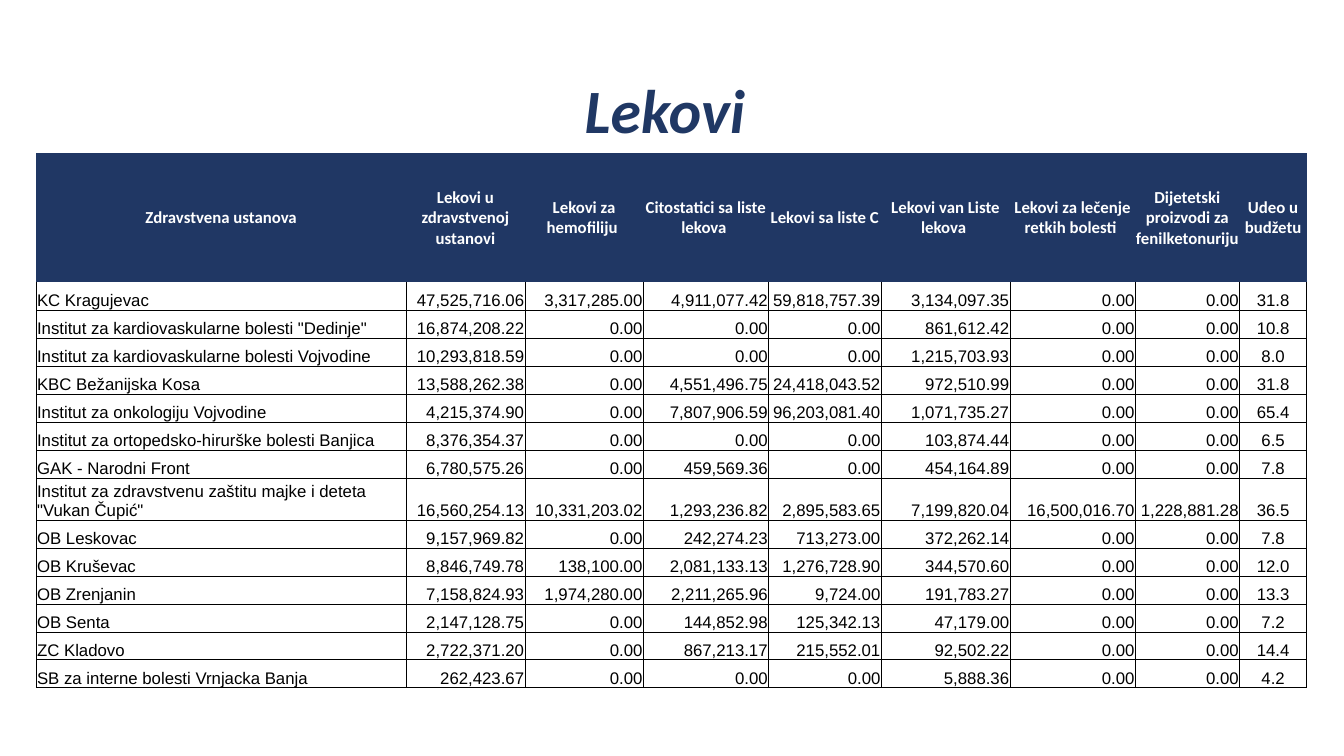
from dataclasses import dataclass

from lxml.etree import SubElement
from pptx import Presentation
from pptx.dml.color import RGBColor
from pptx.enum.text import MSO_ANCHOR as Anchor, MSO_AUTO_SIZE as AutoSize, PP_ALIGN as Align
from pptx.oxml.ns import qn
from pptx.util import Emu, Pt

EMU_PER_PX = 6350  # 144 px to the inch
NAVY, TITLE_NAVY, WHITE, BLACK = "203764", "203864", "FFFFFF", "000000"
PLAIN_TABLE = "{2D5ABB26-0587-4C30-8999-92F81FD0307C}"
HEADER_H, ROW_H, TALL_ROW_H = 184, 40, 60
TALL_ROW = 8


@dataclass(frozen=True)
class Column:
    heading: str
    width: int
    align: Align = Align.RIGHT


@dataclass(frozen=True)
class Style:
    font: str
    size: int
    color: str
    bold: bool = False
    italic: bool = False


TITLE = Style("Calibri", 44, TITLE_NAVY, bold=True, italic=True)
HEADING = Style("Calibri", 12, WHITE, bold=True)
BODY = Style("Arial", 12, BLACK)

COLUMNS = [
    Column("Zdravstvena ustanova", 528, Align.LEFT),
    Column("Lekovi u zdravstvenoj ustanovi", 170),
    Column("Lekovi za hemofiliju ", 169),
    Column("Citostatici sa liste lekova ", 179),
    Column("Lekovi sa liste C", 161),
    Column("Lekovi van Liste lekova ", 184),
    Column("Lekovi za lečenje retkih bolesti ", 179),
    Column("Dijetetski proizvodi za fenilketonuriju ", 149),
    Column("Udeo u budžetu", 96, Align.CENTER),
]

INSTITUTIONS = [
    ("KC Kragujevac", "47,525,716.06", "3,317,285.00", "4,911,077.42",
     "59,818,757.39", "3,134,097.35", "0.00", "0.00", "31.8"),
    ('Institut za kardiovaskularne bolesti "Dedinje"', "16,874,208.22", "0.00", "0.00",
     "0.00", "861,612.42", "0.00", "0.00", "10.8"),
    ("Institut za kardiovaskularne bolesti Vojvodine", "10,293,818.59", "0.00", "0.00",
     "0.00", "1,215,703.93", "0.00", "0.00", "8.0"),
    ("KBC Bežanijska Kosa", "13,588,262.38", "0.00", "4,551,496.75",
     "24,418,043.52", "972,510.99", "0.00", "0.00", "31.8"),
    ("Institut za onkologiju Vojvodine", "4,215,374.90", "0.00", "7,807,906.59",
     "96,203,081.40", "1,071,735.27", "0.00", "0.00", "65.4"),
    ("Institut za ortopedsko-hirurške bolesti Banjica", "8,376,354.37", "0.00", "0.00",
     "0.00", "103,874.44", "0.00", "0.00", "6.5"),
    ("GAK - Narodni Front", "6,780,575.26", "0.00", "459,569.36",
     "0.00", "454,164.89", "0.00", "0.00", "7.8"),
    ('Institut za zdravstvenu zaštitu majke i deteta "Vukan Čupić"',
     "16,560,254.13", "10,331,203.02", "1,293,236.82",
     "2,895,583.65", "7,199,820.04", "16,500,016.70", "1,228,881.28", "36.5"),
    ("OB Leskovac", "9,157,969.82", "0.00", "242,274.23",
     "713,273.00", "372,262.14", "0.00", "0.00", "7.8"),
    ("OB Kruševac", "8,846,749.78", "138,100.00", "2,081,133.13",
     "1,276,728.90", "344,570.60", "0.00", "0.00", "12.0"),
    ("OB Zrenjanin", "7,158,824.93", "1,974,280.00", "2,211,265.96",
     "9,724.00", "191,783.27", "0.00", "0.00", "13.3"),
    ("OB Senta", "2,147,128.75", "0.00", "144,852.98",
     "125,342.13", "47,179.00", "0.00", "0.00", "7.2"),
    ("ZC Kladovo", "2,722,371.20", "0.00", "867,213.17",
     "215,552.01", "92,502.22", "0.00", "0.00", "14.4"),
    ("SB za interne bolesti Vrnjacka Banja", "262,423.67", "0.00", "0.00",
     "0.00", "5,888.36", "0.00", "0.00", "4.2"),
]


def px(n: int) -> Emu:
    return Emu(n * EMU_PER_PX)


def rgb(color: str) -> RGBColor:
    return RGBColor.from_string(color)


def write(tf, text: str, style: Style, align: Align) -> None:
    p = tf.paragraphs[0]
    p.alignment = align
    r = p.add_run()
    r.text = text
    r.font.name, r.font.size = style.font, Pt(style.size)
    r.font.bold, r.font.italic = style.bold, style.italic
    r.font.color.rgb = rgb(style.color)


def add_borders(cell, sides: str) -> None:
    tc_pr = cell._tc.get_or_add_tcPr()
    for side in sides:
        ln = SubElement(tc_pr, qn(f"a:ln{side}"), w=str(Pt(0.5)))
        fill = SubElement(ln, qn("a:solidFill"))
        SubElement(fill, qn("a:srgbClr"), val=BLACK)


def fill_cell(cell, text: str, style: Style, align: Align, anchor: Anchor,
              fill: str | None) -> None:
    cell.margin_left = cell.margin_top = cell.margin_right = px(1)
    cell.margin_bottom = 0
    cell.vertical_anchor = anchor
    if fill:
        cell.fill.solid()
        cell.fill.fore_color.rgb = rgb(fill)
    else:
        cell.fill.background()
    write(cell.text_frame, text, style, align)


def add_title(s) -> None:
    sp = s.shapes.title
    sp.left, sp.top, sp.width, sp.height = px(132), px(58), px(1656), px(209)
    tf = sp.text_frame
    tf.auto_size = AutoSize.NONE
    tf.vertical_anchor = Anchor.MIDDLE
    write(tf, "Lekovi ", TITLE, Align.CENTER)
    tf.paragraphs[0].line_spacing = 0.9


def add_medicine_table(s) -> None:
    heights = [HEADER_H] + [ROW_H] * len(INSTITUTIONS)
    heights[TALL_ROW] = TALL_ROW_H
    width = sum(c.width for c in COLUMNS)
    table = s.shapes.add_table(len(heights), len(COLUMNS), px(52), px(219),
                               px(width), px(sum(heights))).table
    table.horz_banding = False
    table._tbl.tblPr.find(qn("a:tableStyleId")).text = PLAIN_TABLE
    for row, height in zip(table.rows, heights):
        row.height = px(height)

    for j, column in enumerate(COLUMNS):
        table.columns[j].width = px(column.width)
        fill_cell(table.cell(0, j), column.heading, HEADING, Align.CENTER,
                  Anchor.MIDDLE, NAVY)
        for i, values in enumerate(INSTITUTIONS, start=1):
            cell = table.cell(i, j)
            add_borders(cell, "LRB" if i == 1 else "LRTB")
            fill_cell(cell, values[j], BODY, column.align, Anchor.BOTTOM,
                      WHITE if j == 0 else None)


def main() -> None:
    prs = Presentation()
    prs.slide_width, prs.slide_height = px(1920), px(1080)
    s = prs.slides.add_slide(prs.slide_layouts.get_by_name("Title Only"))
    add_title(s)
    add_medicine_table(s)
    prs.save("out.pptx")


if __name__ == "__main__":
    main()
